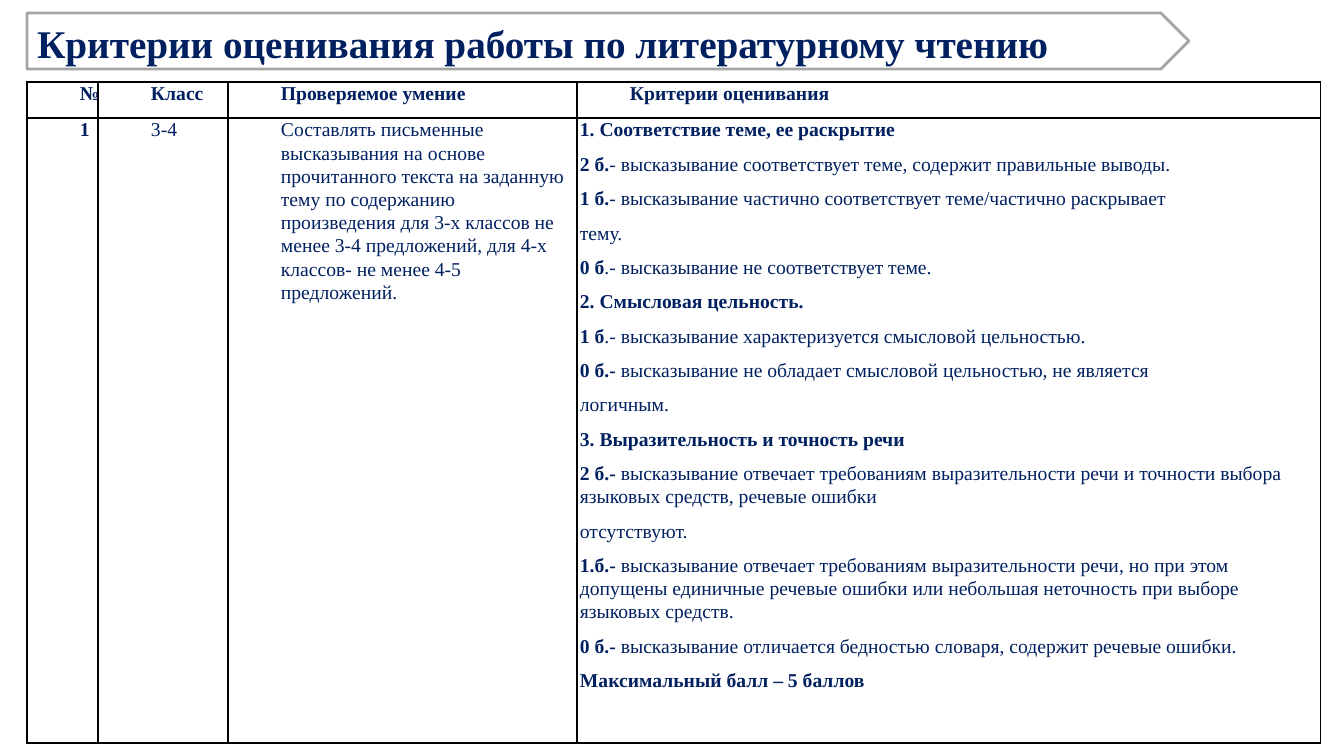
from lxml import etree
from pptx import Presentation
from pptx import util as u
from pptx.dml.color import RGBColor
from pptx.enum import shapes, text
from pptx.oxml import ns

NAVY = RGBColor(0x00, 0x20, 0x60)
WHITE = RGBColor(0xFF, 0xFF, 0xFF)
GRAY = RGBColor(0xA5, 0xA5, 0xA5)
FONT = "Times New Roman"
INDENT = 50

# Each criterion is a bold part followed by a regular part
CRITERIA = [
    ("1. Соответствие теме, ее раскрытие", ""),
    ("2 б.", "- высказывание соответствует теме, содержит правильные выводы."),
    ("1 б.", "- высказывание частично соответствует теме/частично раскрывает"),
    ("", "тему."),
    ("0 б", ".- высказывание не соответствует теме."),
    ("2. Смысловая цельность.", ""),
    ("1 б", ".- высказывание характеризуется смысловой цельностью."),
    ("0 б.-", " высказывание не обладает смысловой цельностью, не является"),
    ("", "логичным."),
    ("3. Выразительность и точность речи", ""),
    ("2 б.-", " высказывание отвечает требованиям выразительности речи и точности "
              "выбора языковых средств, речевые ошибки"),
    ("", "отсутствуют."),
    ("1.б.-", " высказывание отвечает требованиям выразительности речи, но при этом "
              "допущены единичные речевые ошибки или небольшая неточность при выборе "
              "языковых средств."),
    ("0 б.-", " высказывание отличается бедностью словаря, содержит речевые ошибки."),
    ("Максимальный балл – 5 баллов", ""),
]
SKILL = ("Составлять письменные высказывания на основе прочитанного текста на заданную "
         "тему по содержанию произведения для 3-х классов не менее 3-4 предложений, "
         "для 4-х классов- не менее 4-5 предложений.")
ROWS = [
    [[("№", "")], [("Класс", "")], [("Проверяемое умение", "")], [("Критерии оценивания", "")]],
    [[("1", "")], [("", "3-4")], [("", SKILL)], CRITERIA],
]


def px(length):
    return u.Emu(round(length * 12192000 / 1344))


def style(para, size, space_after):
    para.line_spacing = 1.07
    para.space_before = u.Pt(0)
    para.space_after = u.Pt(space_after)
    para.font.name = FONT
    para.font.size = u.Pt(size)
    para.font.color.rgb = NAVY


deck = Presentation()
deck.slide_width, deck.slide_height = px(1344), px(756)
page = deck.slides.add_slide(deck.slide_layouts[5])

# Title banner
banner_place = [px(n) for n in (27, 13, 1162, 56)]
banner = page.shapes.add_shape(shapes.MSO_SHAPE.PENTAGON, *banner_place)
banner.shadow.inherit = False
banner.fill.solid()
banner.fill.fore_color.rgb = WHITE
banner.line.color.rgb = GRAY
banner.line.width = u.Pt(2)

# Title text, in front of the banner
title = page.shapes.title
title.left, title.top, title.width, title.height = banner_place
banner.element.addnext(title.element)
frame = title.text_frame
frame.text = "Критерии оценивания работы по литературному чтению"
frame.auto_size = text.MSO_AUTO_SIZE.NONE
frame.word_wrap = True
frame.vertical_anchor = text.MSO_ANCHOR.MIDDLE
heading = frame.paragraphs[0]
heading.alignment = text.PP_ALIGN.JUSTIFY
heading.font.bold = True
style(heading, 28, 8)

# Table grid
widths, heights = (71, 130, 349, 744), (36, 625)
table = page.shapes.add_table(
    len(heights), len(widths), px(27), px(82), px(sum(widths)), px(sum(heights))).table
table.first_row = table.horz_banding = False
for column, width in zip(table.columns, widths):
    column.width = px(width)
for row, height in zip(table.rows, heights):
    row.height = px(height)

# Cell text and borders
for r, row in enumerate(ROWS):
    for c, lines in enumerate(row):
        cell = table.cell(r, c)
        cell.margin_left = cell.margin_right = px(3)
        cell.margin_top = cell.margin_bottom = 0
        cell.fill.background()
        for i, parts in enumerate(lines):
            para = cell.text_frame.paragraphs[0] if i == 0 else cell.text_frame.add_paragraph()
            style(para, 14, 8 if c == 3 or (r, c) == (1, 2) else 0)
            if lines is not CRITERIA:
                para._p.get_or_add_pPr().set("marL", str(px(INDENT)))
            for words, bold in zip(parts, (True, False)):
                if words:
                    span = para.add_run()
                    span.text = words
                    span.font.bold = bold
                    span.font.name = FONT
                    span.font.size = u.Pt(14)
                    span.font.color.rgb = NAVY
        properties = cell._tc.get_or_add_tcPr()
        for i, side in enumerate(("lnL", "lnR", "lnT", "lnB")):
            border = etree.Element(ns.qn("a:" + side), w=str(u.Pt(1)))
            fill = etree.SubElement(border, ns.qn("a:solidFill"))
            etree.SubElement(fill, ns.qn("a:srgbClr"), val="000000")
            properties.insert(i, border)

deck.save("out.pptx")
